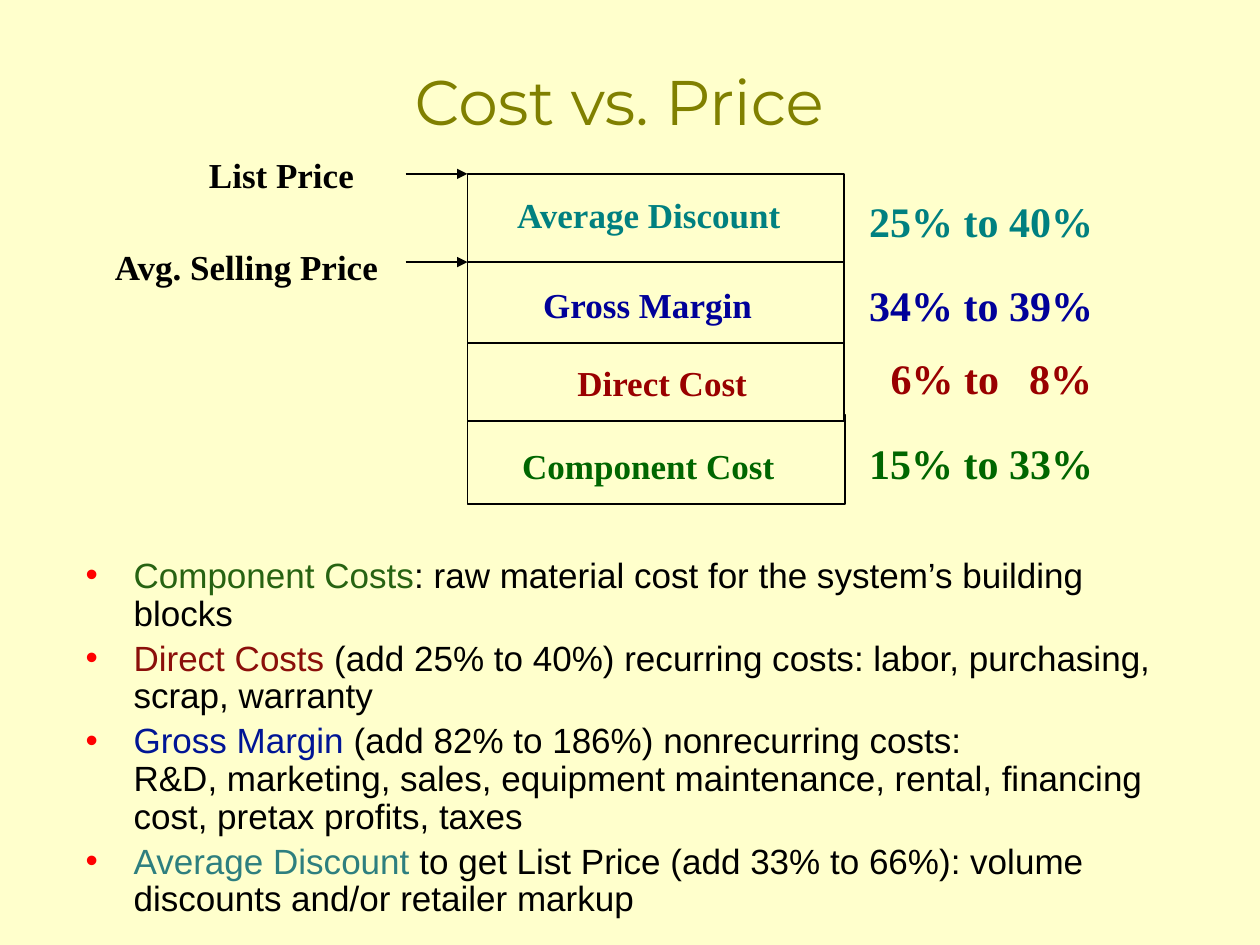
from lxml.etree import SubElement
from pptx import Presentation
from pptx.dml.color import RGBColor
from pptx.enum.shapes import MSO_CONNECTOR, MSO_SHAPE
from pptx.enum.text import MSO_ANCHOR, PP_ALIGN
from pptx.oxml.ns import qn
from pptx.util import Pt

PX = 9144  # 100 px to the inch
CREAM, BLACK, RED = "FFFFCC", "000000", "FF0000"
SERIF, SANS, DISPLAY = "Times New Roman", "Arial", "Montserrat"
TITLE = "Cost vs. Price"

# Bottom layer first: name, colour, rectangle, label box, share, share top
LAYERS = [
    ("Component Cost", "006600", (371, 329, 300, 71), (389, 325, 251, 66), "15% to 33%", 342),
    ("Direct Cost", "990000", (371, 267, 299, 67), (371, 282, 309, 43), "\t6% to\t8%", 275),
    ("Gross Margin", "000099", (371, 203, 299, 69), (411, 200, 206, 63), "34% to 39%", 217),
    ("Average Discount", "008080", (371, 138, 299, 70), (383, 136, 264, 56), "25% to 40%", 150),
]
SHARE_LEFT, SHARE_WIDTH, SHARE_HEIGHT = 680, 203, 50
SHARE_TABS = (17, 127)  # where one-digit numbers start

# Label, box, alignment, arrow height
PRICES = [
    ("List Price", (156, 117, 145, 43), PP_ALIGN.LEFT, 138),
    ("Avg. Selling Price", (55, 190, 255, 43), PP_ALIGN.RIGHT, 208),
]
ARROW_START, ARROW_END = 322, 371

NOTES = [
    ("Component Costs", "276312", [": raw material cost for the system’s building blocks"]),
    ("Direct Costs", "8B0F0A",
     [" (add 25% to 40%) recurring costs: labor, purchasing, scrap, warranty"]),
    ("Gross Margin", "001595",
     [" (add 82% to 186%) nonrecurring costs: ",
      "R&D, marketing, sales, equipment maintenance, rental, financing cost, "
      "pretax profits, taxes"]),
    ("Average Discount", "2E7F7F",
     [" to get List Price (add 33% to 66%): volume discounts and/or retailer markup"]),
]
INDENT = 38


def color(value):
    return RGBColor.from_string(value)


def emu(box):
    return [length * PX for length in box]


def place(shape, box):
    shape.left, shape.top, shape.width, shape.height = emu(box)


def add_run(paragraph, text, size, font, value, bold=False):
    run = paragraph.add_run()
    run.text = text
    run.font.size = Pt(size)
    run.font.name = font
    run.font.bold = bold
    run.font.color.rgb = color(value)


def add_label(slide, text, box, size, value, align):
    frame = slide.shapes.add_textbox(*emu(box)).text_frame
    frame.word_wrap = False
    frame.vertical_anchor = MSO_ANCHOR.BOTTOM
    paragraph = frame.paragraphs[0]
    paragraph.alignment = align
    add_run(paragraph, text, size, SERIF, value, bold=True)
    if "\t" in text:
        tabs = SubElement(paragraph._p.get_or_add_pPr(), qn("a:tabLst"))
        for position in SHARE_TABS:
            SubElement(tabs, qn("a:tab"), pos=str(position * PX), algn="l")


def add_layer_box(slide, box):
    shape = slide.shapes.add_shape(MSO_SHAPE.RECTANGLE, *emu(box))
    shape.shadow.inherit = False
    shape.fill.solid()
    shape.fill.fore_color.rgb = color(CREAM)
    shape.line.color.rgb = color(BLACK)
    shape.line.width = Pt(1)


def add_arrow(slide, y):
    arrow = slide.shapes.add_connector(
        MSO_CONNECTOR.STRAIGHT, *emu((ARROW_START, y, ARROW_END, y)))
    arrow.line.color.rgb = color(BLACK)
    arrow.line.width = Pt(1)
    SubElement(arrow.line._get_or_add_ln(), qn("a:tailEnd"), type="triangle")
    SubElement(arrow._element.spPr, qn("a:effectLst"))


def add_bullet(paragraph):
    properties = paragraph._p.get_or_add_pPr()
    properties.set("marL", str(INDENT * PX))
    properties.set("indent", str(-INDENT * PX))
    bullet_color = SubElement(properties, qn("a:buClr"))
    SubElement(bullet_color, qn("a:srgbClr"), val=RED)
    SubElement(properties, qn("a:buFont"), typeface=SANS)
    SubElement(properties, qn("a:buChar"), char="•")


def fill_notes(body):
    place(body, (58, 438, 867, 279))
    frame = body.text_frame
    frame.word_wrap = True
    for index, (term, value, lines) in enumerate(NOTES):
        paragraph = frame.add_paragraph() if index else frame.paragraphs[0]
        paragraph.line_spacing = 0.9
        paragraph.space_before = Pt(4)
        add_bullet(paragraph)
        add_run(paragraph, term, 20, SANS, value)
        for number, line in enumerate(lines):
            if number:
                paragraph.add_line_break()
            add_run(paragraph, line, 20, SANS, BLACK)


def main():
    presentation = Presentation()
    presentation.slide_width, presentation.slide_height = emu((1000, 750))
    slide = presentation.slides.add_slide(presentation.slide_layouts[1])
    slide.background.fill.solid()
    slide.background.fill.fore_color.rgb = color(CREAM)

    title = slide.shapes.title
    place(title, (58, 17, 867, 125))
    title.text_frame.vertical_anchor = MSO_ANCHOR.MIDDLE
    heading = title.text_frame.paragraphs[0]
    heading.alignment = PP_ALIGN.CENTER
    add_run(heading, TITLE, 36, DISPLAY, "808000")
    fill_notes(slide.placeholders[1])

    for name, value, box, label_box, share, share_top in LAYERS:
        add_layer_box(slide, box)
        add_label(slide, name, label_box, 20, value, PP_ALIGN.CENTER)
        share_box = (SHARE_LEFT, share_top, SHARE_WIDTH, SHARE_HEIGHT)
        add_label(slide, share, share_box, 24, value, PP_ALIGN.LEFT)

    for name, box, align, arrow_y in PRICES:
        add_label(slide, name, box, 20, BLACK, align)
        add_arrow(slide, arrow_y)

    presentation.save("out.pptx")


if __name__ == "__main__":
    main()
